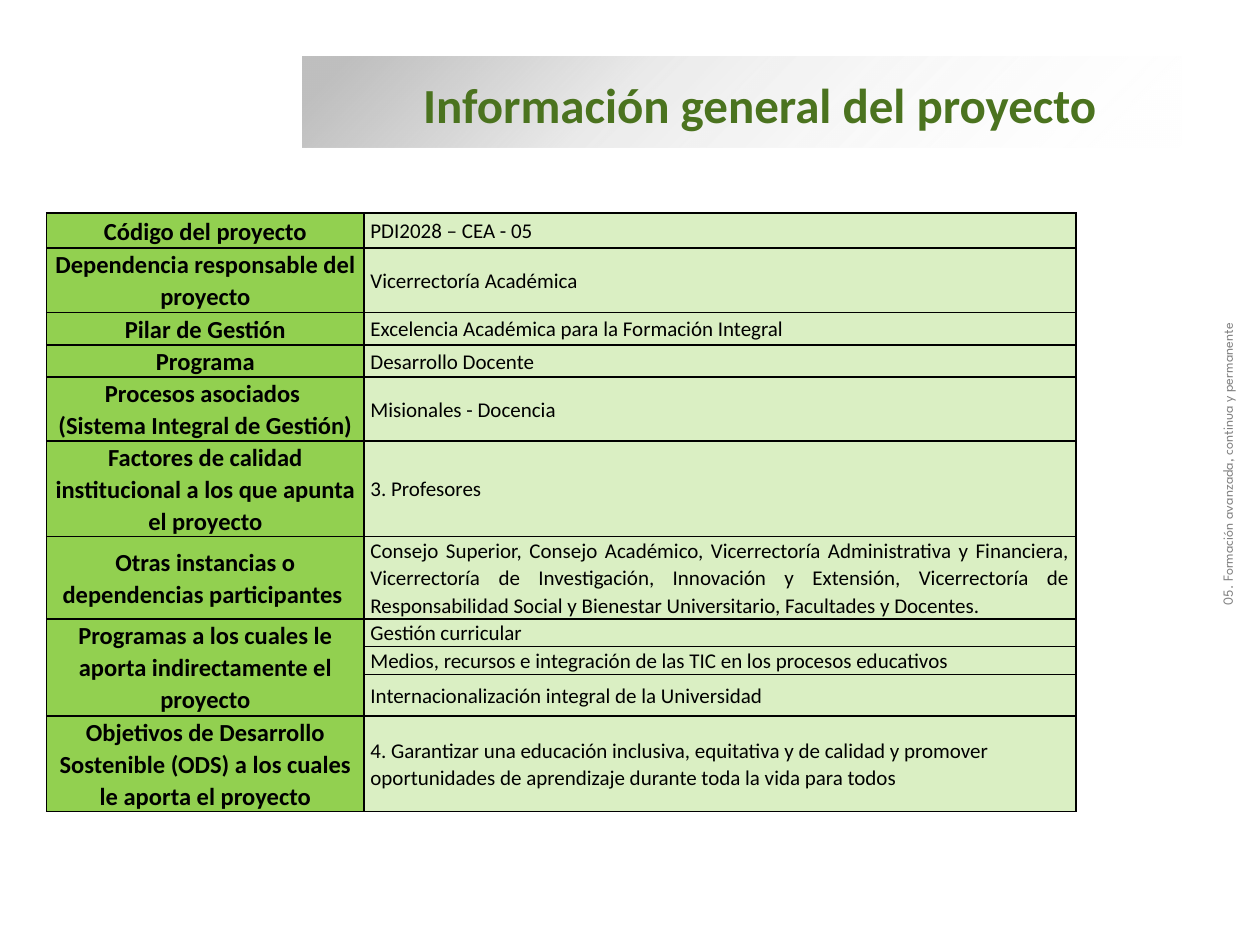
"""Build the general project information slide."""
from lxml import etree
from pptx import Presentation, util as u
from pptx.dml.color import RGBColor
from pptx.enum import shapes, text
from pptx.oxml import ns, parse_xml

BLACK = RGBColor(0x00, 0x00, 0x00)
GRAY = RGBColor(0x80, 0x80, 0x80)
TITLE_GREEN = RGBColor(0x4B, 0x73, 0x1F)
LABEL_GREEN = RGBColor(0x92, 0xD0, 0x50)
VALUE_GREEN = RGBColor(0xDA, 0xEF, 0xC3)
BANNER_STOPS = [(5, "BFBFBF", 100), (37, "BFBFBF", 31), (100, "FFFFFF", 0)]

TITLE = "Información general del proyecto"
SIDE_NOTE = "05. Formación avanzada, continua y permanente"
LEFT, CENTER, JUSTIFY = text.PP_ALIGN.LEFT, text.PP_ALIGN.CENTER, text.PP_ALIGN.JUSTIFY
COLUMN_WIDTHS = [2.52, 5.65]
SECTIONS = [
    ("Código del proyecto", [("PDI2028 – CEA - 05", 0.28)]),
    ("Dependencia responsable del proyecto", [("Vicerrectoría Académica", 0.51)]),
    ("Pilar de Gestión", [("Excelencia Académica para la Formación Integral", 0.26)]),
    ("Programa", [("Desarrollo Docente", 0.25)]),
    ("Procesos asociados \n(Sistema Integral de Gestión)", [("Misionales - Docencia", 0.5)]),
    ("Factores de calidad institucional a los que apunta el proyecto", [("3. Profesores", 0.76)]),
    ("Otras instancias o dependencias participantes ", [
        ("Consejo Superior, Consejo Académico, Vicerrectoría Administrativa y Financiera, "
         "Vicerrectoría de Investigación, Innovación y Extensión, Vicerrectoría de "
         "Responsabilidad Social y Bienestar Universitario, Facultades y Docentes.", 0.65)]),
    ("Programas a los cuales le aporta indirectamente el proyecto", [
        ("Gestión curricular", 0.22),
        ("Medios, recursos e integración de las TIC en los procesos educativos", 0.22),
        ("Internacionalización integral de la Universidad", 0.33)]),
    ("Objetivos de Desarrollo Sostenible (ODS) a los cuales le aporta el proyecto", [
        ("4. Garantizar una educación inclusiva, equitativa y de calidad y promover "
         "oportunidades de aprendizaje durante toda la vida para todos", 0.76)]),
]
JUSTIFIED_SECTION = 6


def write(paragraph, content, size, color, bold=False, font="Calibri", align=LEFT):
    paragraph.alignment = align
    for index, line in enumerate(content.split("\n")):
        if index:
            paragraph.add_line_break()
        run = paragraph.add_run()
        run.text = line
        run.font.name, run.font.size, run.font.bold = font, u.Pt(size), bold
        run.font.color.rgb = color


def add_text(slide, box, content, **style):
    shape = slide.shapes.add_textbox(*map(u.Inches, box))
    frame = shape.text_frame
    frame.word_wrap = True
    frame.auto_size = text.MSO_AUTO_SIZE.SHAPE_TO_FIT_TEXT
    write(frame.paragraphs[0], content, **style)
    return shape


def add_banner(slide):
    banner = slide.shapes.add_shape(
        shapes.MSO_SHAPE.RECTANGLE, *map(u.Inches, (2.4, 0.45, 6.98, 0.72)))
    banner.shadow.inherit = False
    banner.line.fill.background()
    stops = "".join(
        f'<a:gs pos="{position * 1000}"><a:srgbClr val="{color}">'
        f'<a:alpha val="{alpha * 1000}"/></a:srgbClr></a:gs>'
        for position, color, alpha in BANNER_STOPS)
    gradient = parse_xml(
        f'<a:gradFill {ns.nsdecls("a")} rotWithShape="1"><a:gsLst>{stops}</a:gsLst>'
        '<a:lin ang="2700000" scaled="0"/></a:gradFill>')
    banner.element.spPr.find(ns.qn("a:prstGeom")).addnext(gradient)


def style_cell(cell, fill, margin):
    cell.margin_left = cell.margin_right = u.Inches(margin)
    cell.margin_top = cell.margin_bottom = 0
    cell.vertical_anchor = text.MSO_ANCHOR.MIDDLE
    properties = cell._tc.get_or_add_tcPr()
    for side in ("lnL", "lnR", "lnT", "lnB"):
        border = etree.SubElement(properties, ns.qn(f"a:{side}"), w=str(u.Pt(1)))
        solid = etree.SubElement(border, ns.qn("a:solidFill"))
        etree.SubElement(solid, ns.qn("a:srgbClr"), val=str(BLACK))
    cell.fill.solid()
    cell.fill.fore_color.rgb = fill


def fill_cell(cell, content, **style):
    paragraph = cell.text_frame.paragraphs[0]
    paragraph.line_spacing = 1.07
    write(paragraph, content, color=BLACK, **style)


def add_project_table(slide):
    heights = [height for _, values in SECTIONS for _, height in values]
    box = (0.37, 1.69, sum(COLUMN_WIDTHS), sum(heights))
    table = slide.shapes.add_table(
        len(heights), len(COLUMN_WIDTHS), *map(u.Inches, box)).table
    table.first_row = table.horz_banding = False
    for column, width in zip(table.columns, COLUMN_WIDTHS):
        column.width = u.Inches(width)
    for row, height in zip(table.rows, heights):
        row.height = u.Inches(height)
        style_cell(row.cells[0], LABEL_GREEN, 0.04)
        style_cell(row.cells[1], VALUE_GREEN, 0.05)
    top = 0
    for index, (label, values) in enumerate(SECTIONS):
        label_cell = table.cell(top, 0)
        if len(values) > 1:
            label_cell.merge(table.cell(top + len(values) - 1, 0))
        fill_cell(label_cell, label, size=14, bold=True, align=CENTER)
        align = JUSTIFY if index == JUSTIFIED_SECTION else LEFT
        for offset, (value, _) in enumerate(values):
            fill_cell(table.cell(top + offset, 1), value, size=12, align=align)
        top += len(values)


def main():
    presentation = Presentation()
    presentation.slide_width, presentation.slide_height = u.Inches(10), u.Inches(7.5)
    slide = presentation.slides.add_slide(presentation.slide_layouts[6])
    add_project_table(slide)
    add_banner(slide)
    title = add_text(slide, (3.26, 0.54, 6.2, 0.57), TITLE,
                     size=28, color=TITLE_GREEN, bold=True)
    title.text_frame.vertical_anchor = text.MSO_ANCHOR.MIDDLE
    side_note = add_text(slide, (7.39, 3.5, 4.84, 0.37), SIDE_NOTE,
                         size=8, color=GRAY, font="League Spartan", align=CENTER)
    side_note.rotation = 270
    presentation.save("out.pptx")


if __name__ == "__main__":
    main()
